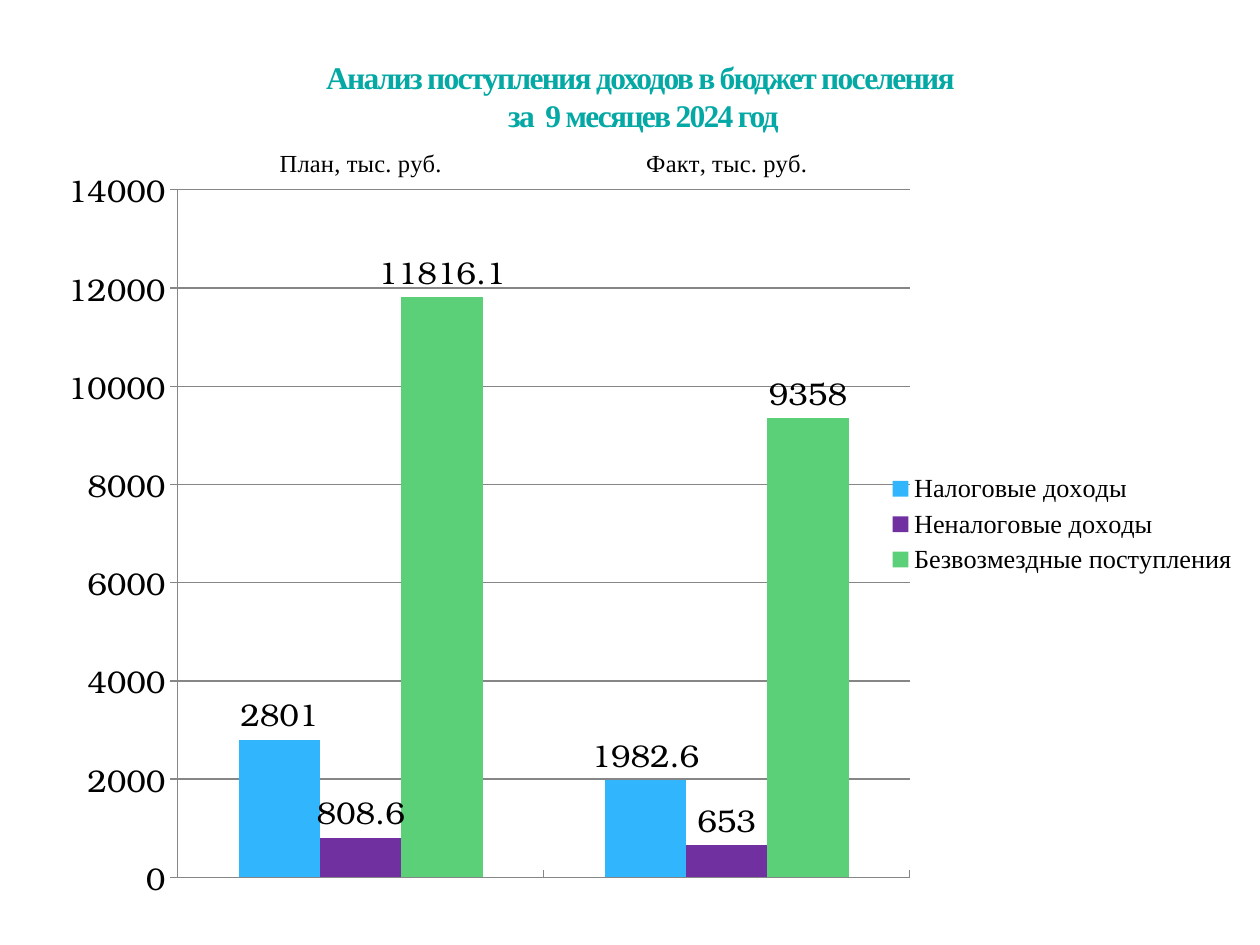
from lxml.etree import SubElement
from pptx import Presentation
from pptx.chart.data import CategoryChartData
from pptx.dml.color import RGBColor
from pptx.enum.chart import (XL_CHART_TYPE, XL_LABEL_POSITION, XL_LEGEND_POSITION,
                             XL_TICK_LABEL_POSITION, XL_TICK_MARK)
from pptx.enum.text import MSO_ANCHOR, PP_ALIGN
from pptx.oxml import parse_xml
from pptx.oxml.ns import nsdecls, qn
from pptx.util import Cm, Pt


def style(font, name, size, color="000000", bold=False):
    font.name = name
    font.size = Pt(size)
    font.bold = bold
    font.color.rgb = RGBColor.from_string(color)


def place(part, box, inner=False):
    for old in part.findall(qn("c:layout")):
        part.remove(old)
    layout = parse_xml(f"<c:layout {nsdecls('c')}><c:manualLayout/></c:layout>")
    rules = [("layoutTarget", "inner")] if inner else []
    rules += [("xMode", "edge"), ("yMode", "edge")]
    rules += zip("xywh", box)
    for tag, val in rules:
        SubElement(layout[0], qn(f"c:{tag}")).set("val", str(val))
    part.insert(0 if inner else 1, layout)


SERIF = "Times New Roman"
BONUM = "TeX Gyre Bonum"
GRAY = RGBColor.from_string("868686")

deck = Presentation()
deck.slide_width, deck.slide_height = Cm(25.4), Cm(19.05)
slide = deck.slides.add_slide(deck.slide_layouts[6])

rows = [
    ("Налоговые доходы", (2801, 1982.6), "31B6FD"),
    ("Неналоговые доходы", (808.6, 653), "7030A0"),
    ("Безвозмездные поступления", (11816.1, 9358), "5BD078"),
]
data = CategoryChartData()
data.categories = ["План, тыс. руб.", "Факт, тыс. руб."]
for name, vals, color in rows:
    data.add_series(name, vals)

chart = slide.shapes.add_chart(XL_CHART_TYPE.COLUMN_CLUSTERED, Cm(1.3), Cm(2.92),
                               Cm(23.8), Cm(15.19), data).chart
chart.has_title = False
style(chart.font, BONUM, 18)
plot = chart.plots[0]
plot.gap_width = 150
plot.overlap = 0
plot.vary_by_categories = False
for row, (name, vals, color) in zip(plot.series, rows):
    row.invert_if_negative = False
    row.format.fill.solid()
    row.format.fill.fore_color.rgb = RGBColor.from_string(color)
    tags = row.data_labels
    tags.show_value = True
    tags.position = XL_LABEL_POSITION.OUTSIDE_END
    style(tags.font, BONUM, 18)

cats = chart.category_axis
cats.tick_label_position = XL_TICK_LABEL_POSITION.HIGH
cats.major_tick_mark = XL_TICK_MARK.INSIDE
style(cats.tick_labels.font, SERIF, 14)
nums = chart.value_axis
nums.minimum_scale, nums.maximum_scale, nums.major_unit = 0, 14000, 2000
nums.major_tick_mark = XL_TICK_MARK.OUTSIDE
style(nums.tick_labels.font, BONUM, 18)
for line in (cats.format.line, nums.format.line, nums.major_gridlines.format.line):
    line.color.rgb = GRAY
    line.width = Pt(0.75)

chart.has_legend = True
legend = chart.legend
legend.position = XL_LEGEND_POSITION.RIGHT
legend.include_in_layout = False
style(legend.font, SERIF, 15)
place(chart.element.find(".//" + qn("c:plotArea")), (0.096, 0.06, 0.62, 0.915), True)
place(chart.element.find(".//" + qn("c:legend")), (0.69, 0.43, 0.31, 0.15))

box = slide.shapes.add_textbox(Cm(2.9), Cm(1.12), Cm(20.02), Cm(2.21))
frame = box.text_frame
frame.word_wrap = True
frame.vertical_anchor = MSO_ANCHOR.TOP
frame.margin_top = Cm(0.05)
frame.text = "Анализ поступления доходов в бюджет поселения\v за  9 месяцев 2024 год"
head = frame.paragraphs[0]
head.alignment = PP_ALIGN.CENTER
style(head.font, SERIF, 18, "04A8A4", True)
for run in head.runs:
    run.font._element.set("spc", "-100")

deck.save("out.pptx")
